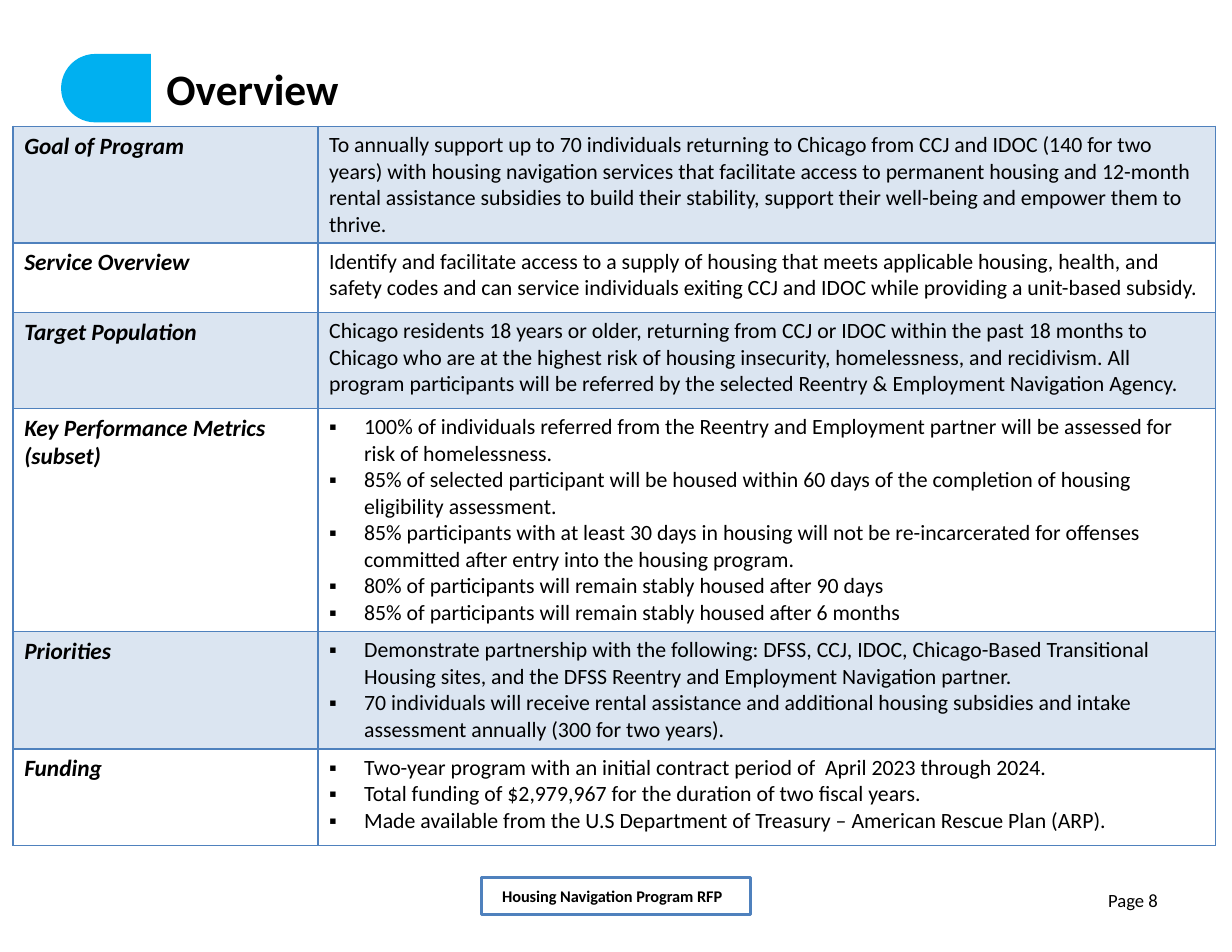
from dataclasses import dataclass

from lxml import etree
from pptx import Presentation
from pptx.dml.color import RGBColor
from pptx.enum.shapes import MSO_SHAPE
from pptx.enum.text import MSO_ANCHOR, PP_ALIGN
from pptx.oxml.ns import qn
from pptx.util import Pt

PILL = MSO_SHAPE.ROUNDED_RECTANGLE
RECTANGLE = MSO_SHAPE.RECTANGLE
MIDDLE = MSO_ANCHOR.MIDDLE
LEFT, CENTER, RIGHT = PP_ALIGN.LEFT, PP_ALIGN.CENTER, PP_ALIGN.RIGHT


@dataclass(frozen=True)
class Theme:
    font: str = "Calibri"
    black: RGBColor = RGBColor(0, 0, 0)
    white: RGBColor = RGBColor(255, 255, 255)
    cyan: RGBColor = RGBColor(0x00, 0xB0, 0xF0)
    blue: RGBColor = RGBColor(0x4F, 0x81, 0xBD)
    band_alpha: int = 20
    title: float = 27.9
    label: float = 15
    body: float = 14
    page: float = 12
    footer: float = 10.5


THEME = Theme()
BULLET_INDENT = Pt(22.5)
COLUMN_WIDTHS = (196, 577)

# label lines, body paragraphs, whether they are bulleted, row height
ROWS = [
    (["Goal of Program"],
     ["To annually support up to 70 individuals returning to Chicago from CCJ and IDOC "
      "(140 for two years) with housing navigation services that facilitate access to "
      "permanent housing and 12-month rental assistance subsidies to build their stability, "
      "support their well-being and empower them to thrive."], False, 75),
    (["Service Overview"],
     ["Identify and facilitate access to a supply of housing that meets applicable housing, "
      "health, and safety codes and can service individuals exiting CCJ and IDOC while "
      "providing a unit-based subsidy."], False, 44.8),
    (["Target Population"],
     ["Chicago residents 18 years or older, returning from CCJ or IDOC within the past 18 "
      "months to Chicago who are at the highest risk of housing insecurity, homelessness, and "
      "recidivism. All program participants will be referred by the selected Reentry & "
      "Employment Navigation Agency."], False, 61.5),
    (["Key Performance Metrics", "(subset)"],
     ["100% of individuals referred from the Reentry and Employment partner will be assessed "
      "for risk of homelessness.",
      "85% of selected participant will be housed within 60 days of the completion of housing "
      "eligibility assessment.",
      "85% participants with at least 30 days in housing will not be re-incarcerated for "
      "offenses committed after entry into the housing program.",
      "80% of participants will remain stably housed after 90 days",
      "85% of participants will remain stably housed after 6 months"], True, 143.5),
    (["Priorities"],
     ["Demonstrate partnership with the following: DFSS, CCJ, IDOC, Chicago-Based "
      "Transitional Housing sites, and the DFSS Reentry and Employment Navigation partner.",
      "70 individuals will receive rental assistance and additional housing subsidies and "
      "intake assessment annually (300 for two years)."], True, 75.5),
    (["Funding"],
     ["Two-year program with an initial contract period of  April 2023 through 2024.",
      "Total funding of $2,979,967 for the duration of two fiscal years.",
      "Made available from the U.S Department of Treasury – American Rescue Plan (ARP)."],
     True, 62),
]


def add_bullet(paragraph):
    properties = paragraph._p.get_or_add_pPr()
    properties.set("marL", str(BULLET_INDENT))
    properties.set("indent", str(-BULLET_INDENT))
    etree.SubElement(properties, qn("a:buFont"), typeface="Arial")
    etree.SubElement(properties, qn("a:buChar"), char="▪")


def write(frame, lines, size, bold=False, italic=False, align=LEFT, bulleted=False):
    frame.word_wrap = True
    for index, line in enumerate(lines):
        paragraph = frame.add_paragraph() if index else frame.paragraphs[0]
        paragraph.alignment = align
        if bulleted:
            add_bullet(paragraph)
        run = paragraph.add_run()
        run.text = line
        font = run.font
        font.name, font.size = THEME.font, Pt(size)
        font.bold, font.italic = bold, italic
        font.color.rgb = THEME.black


def set_margins(frame, side, vertical):
    frame.margin_left = frame.margin_right = Pt(side)
    frame.margin_top = frame.margin_bottom = Pt(vertical)


def add_block(slide, preset, left, top, width, height, fill, line=None):
    shape = slide.shapes.add_shape(preset, Pt(left), Pt(top), Pt(width), Pt(height))
    shape.shadow.inherit = False
    shape.fill.solid()
    shape.fill.fore_color.rgb = fill
    if line is None:
        shape.line.fill.background()
    else:
        shape.line.color.rgb = line
        shape.line.width = Pt(2)
    return shape


def add_title(slide, text):
    title = slide.shapes.title
    title.left, title.top, title.width, title.height = Pt(99), Pt(36.7), Pt(653), Pt(39.6)
    frame = title.text_frame
    set_margins(frame, 8, 4)
    frame.vertical_anchor = MIDDLE
    write(frame, [text], THEME.title, bold=True)


def add_title_band(slide):
    """Pill whose left end stands out beside the white title panel, both behind the title."""
    pill = add_block(slide, PILL, 39.3, 34.7, 607.7, 44, THEME.cyan)
    pill.adjustments[0] = 0.5
    panel = add_block(slide, RECTANGLE, 98, 29.5, 552.2, 62, THEME.white, THEME.white)
    for shape in (pill, panel):
        slide.shapes.title._element.addprevious(shape._element)


def fill_band(cell):
    cell.fill.solid()
    cell.fill.fore_color.rgb = THEME.blue
    color = cell._tc.tcPr.find(qn("a:solidFill"))[0]
    etree.SubElement(color, qn("a:alpha"), val=str(THEME.band_alpha * 1000))


def set_borders(cell):
    properties = cell._tc.get_or_add_tcPr()
    for position, side in enumerate(("lnL", "lnR", "lnT", "lnB")):
        line = etree.Element(qn(f"a:{side}"), w=str(Pt(1)))
        fill = etree.SubElement(line, qn("a:solidFill"))
        etree.SubElement(fill, qn("a:srgbClr"), val=str(THEME.blue))
        properties.insert(position, line)


def add_overview_table(slide):
    frame = slide.shapes.add_table(len(ROWS), len(COLUMN_WIDTHS), Pt(8.4), Pt(81.2),
                                   Pt(sum(COLUMN_WIDTHS)), Pt(sum(row[-1] for row in ROWS)))
    table = frame.table
    table.first_row = table.horz_banding = False
    for column, width in zip(table.columns, COLUMN_WIDTHS):
        column.width = Pt(width)
    for index, (label, body, bulleted, height) in enumerate(ROWS):
        row = table.rows[index]
        row.height = Pt(height)
        label_cell, body_cell = row.cells
        write(label_cell.text_frame, label, THEME.label, bold=True, italic=True)
        write(body_cell.text_frame, body, THEME.body, bulleted=bulleted)
        for cell in (label_cell, body_cell):
            if index % 2 == 0:
                fill_band(cell)
            else:
                cell.fill.background()
            set_borders(cell)


def add_page_number(slide, text):
    box = slide.shapes.add_textbox(Pt(567.4), Pt(567.4), Pt(185), Pt(32.4))
    set_margins(box.text_frame, 8, 4)
    write(box.text_frame, [text], THEME.page, align=RIGHT)


def add_footer(slide, text):
    shape = add_block(slide, RECTANGLE, 309.4, 564, 173.3, 24.2, THEME.white, THEME.blue)
    shape.text_frame.vertical_anchor = MIDDLE
    write(shape.text_frame, [text], THEME.footer, bold=True, align=CENTER)


def main():
    presentation = Presentation()
    presentation.slide_width, presentation.slide_height = Pt(792), Pt(612)
    slide = presentation.slides.add_slide(presentation.slide_layouts[5])
    add_title_band(slide)
    add_title(slide, "Overview")
    add_page_number(slide, "Page 8")
    add_overview_table(slide)
    add_footer(slide, "Housing Navigation Program RFP  ")
    presentation.save("out.pptx")


if __name__ == "__main__":
    main()
